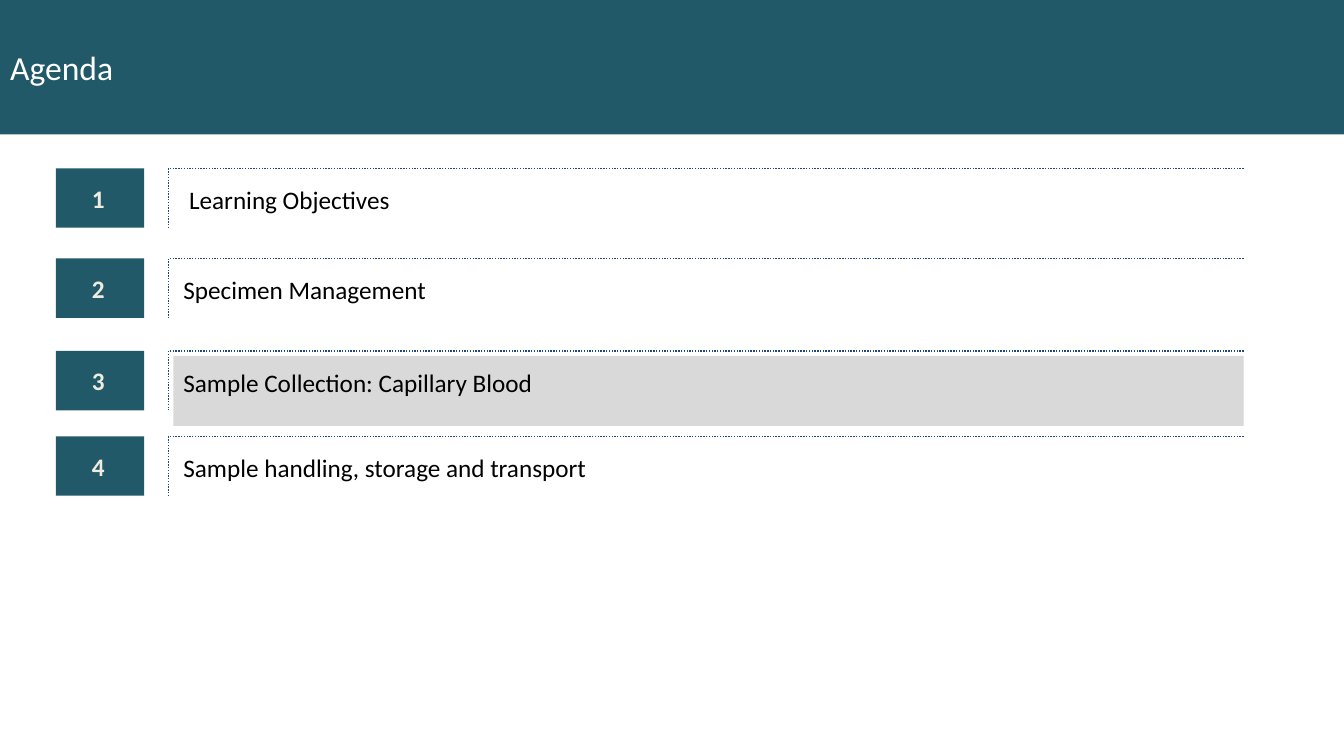
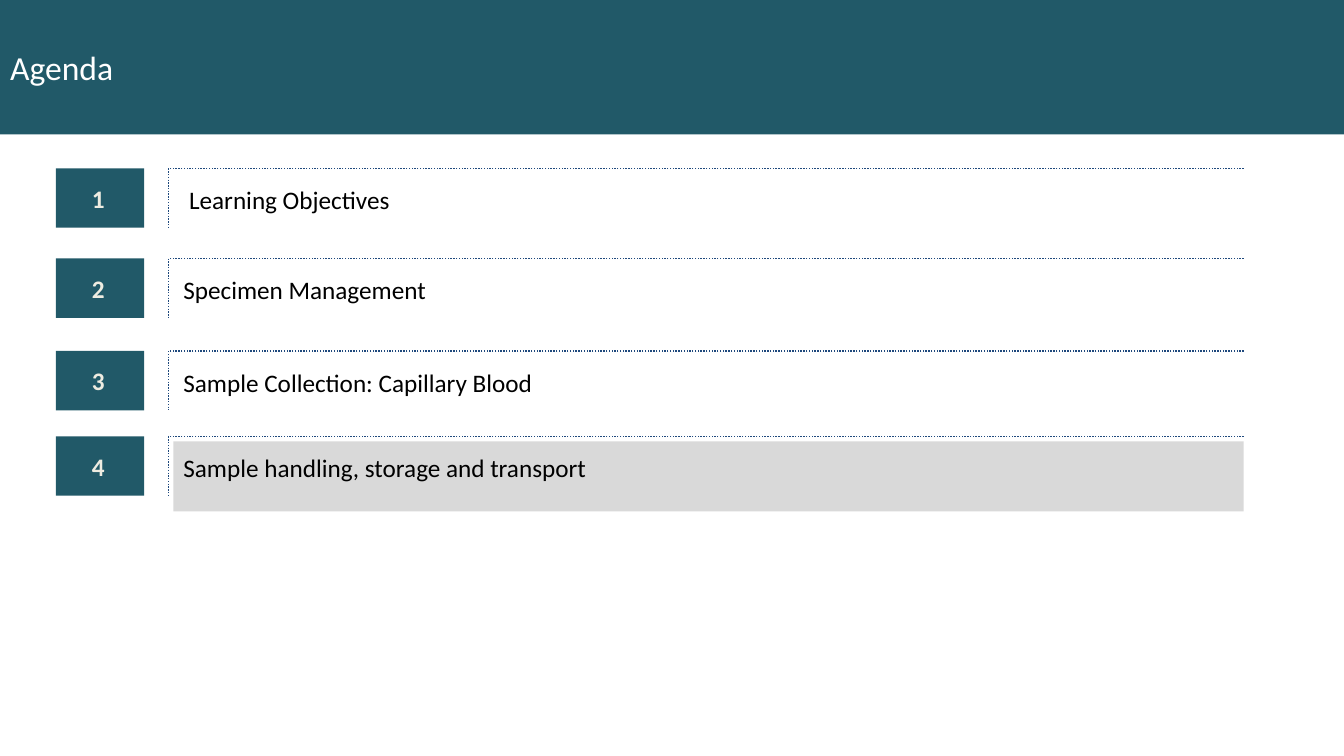
from dataclasses import dataclass
from typing import Any

from pptx import Presentation
from pptx.dml.color import RGBColor
from pptx.enum import dml, shapes, text
from pptx.util import Pt

# Shared look
TEAL, CREAM, WHITE, BLACK = "215968", "EEECE1", "FFFFFF", "000000"
HIGHLIGHT_GREY, RULE_BLUE = "D9D9D9", "1F497D"
SLIDE_WIDTH, SLIDE_HEIGHT, BAND_HEIGHT = 960, 540, 96

# Agenda grid
BADGE_LEFT, BADGE_WIDTH, ROW_HEIGHT = 40, 63, 42.5
RULE_LEFT, RULE_RIGHT = 120.5, 888.3
TOPIC_LEFT, TOPIC_WIDTH, TOPIC_HEIGHT, TOPIC_OFFSET = 131, 713.5, 20.7, 13.2
HIGHLIGHT_LEFT, HIGHLIGHT_HEIGHT, HIGHLIGHT_OFFSET = 123.8, 50, 3.7

TITLE_FRAME = {
    "vertical_anchor": text.MSO_ANCHOR.MIDDLE,
    "auto_size": text.MSO_AUTO_SIZE.NONE,
    "word_wrap": True,
}
BADGE_FRAME = TITLE_FRAME | {
    "margin_left": Pt(4.3), "margin_right": Pt(7.2),
    "margin_top": Pt(3.6), "margin_bottom": Pt(3.6),
}
TOPIC_FRAME = {
    "margin_left": 0, "margin_right": 0, "margin_top": 0, "margin_bottom": 0,
    "word_wrap": True, "auto_size": text.MSO_AUTO_SIZE.SHAPE_TO_FIT_TEXT,
}


@dataclass(frozen=True)
class AgendaItem:
    number: int
    topic: str
    top: float


AGENDA = [
    AgendaItem(1, " Learning Objectives", 120.2),
    AgendaItem(2, "Specimen Management", 184.6),
    AgendaItem(3, "Sample Collection: Capillary Blood", 250.6),
    AgendaItem(4, "Sample handling, storage and transport", 311.6),
]


def color(value: str) -> RGBColor:
    return RGBColor.from_string(value)


def apply(target: Any, formats: dict[str, Any]) -> None:
    for name, value in formats.items():
        setattr(target, name, value)


def fill(shape: Any, value: str) -> None:
    shape.fill.solid()
    shape.fill.fore_color.rgb = color(value)


def write(shape: Any, words: str, frame: dict[str, Any], size: float, ink: str,
          align: Any = text.PP_ALIGN.LEFT, bold: bool = False) -> None:
    apply(shape.text_frame, frame)
    paragraph = shape.text_frame.paragraphs[0]
    paragraph.alignment = align
    run = paragraph.add_run()
    run.text = words
    apply(run.font, {"name": "Calibri", "size": Pt(size), "bold": bold})
    run.font.color.rgb = color(ink)


def add_rectangle(parent: Any, left: float, top: float, width: float,
                  height: float, value: str) -> Any:
    rectangle = parent.shapes.add_shape(
        shapes.MSO_SHAPE.RECTANGLE, Pt(left), Pt(top), Pt(width), Pt(height))
    rectangle.shadow.inherit = False
    rectangle.line.fill.background()
    fill(rectangle, value)
    return rectangle


def add_title_band(slide: Any, words: str) -> None:
    band = slide.shapes.title
    apply(band, {"left": 0, "top": 0, "width": Pt(SLIDE_WIDTH),
                 "height": Pt(BAND_HEIGHT)})
    fill(band, TEAL)
    write(band, words, TITLE_FRAME, 24, WHITE)


def add_agenda_row(slide: Any, item: AgendaItem) -> None:
    row = slide.shapes.add_group_shape()

    # Number badge
    badge = add_rectangle(row, BADGE_LEFT, item.top, BADGE_WIDTH, ROW_HEIGHT, TEAL)
    write(badge, str(item.number), BADGE_FRAME, 18, CREAM,
          text.PP_ALIGN.CENTER, bold=True)

    # Topic
    topic = row.shapes.add_textbox(Pt(TOPIC_LEFT), Pt(item.top + TOPIC_OFFSET),
                                   Pt(TOPIC_WIDTH), Pt(TOPIC_HEIGHT))
    write(topic, item.topic, TOPIC_FRAME, 18, BLACK)
    topic.text_frame.paragraphs[0].line_spacing = 0.95

    # Dotted rule along the top and left
    outline = row.shapes.build_freeform(Pt(RULE_RIGHT), Pt(item.top))
    outline.add_line_segments(
        [(Pt(RULE_LEFT), Pt(item.top)),
         (Pt(RULE_LEFT), Pt(item.top + ROW_HEIGHT))], close=False)
    rule = outline.convert_to_shape()
    rule.shadow.inherit = False
    rule.fill.background()
    rule.line.color.rgb = color(RULE_BLUE)
    apply(rule.line, {"width": Pt(1), "dash_style": dml.MSO_LINE.ROUND_DOT})


def add_agenda_slide(deck: Any, current: AgendaItem) -> None:
    slide = deck.slides.add_slide(deck.slide_layouts.get_by_name("Title Only"))
    add_title_band(slide, "Agenda")
    add_rectangle(slide, HIGHLIGHT_LEFT, current.top + HIGHLIGHT_OFFSET,
                  RULE_RIGHT - HIGHLIGHT_LEFT, HIGHLIGHT_HEIGHT, HIGHLIGHT_GREY)
    for item in AGENDA:
        add_agenda_row(slide, item)


def main() -> None:
    deck = Presentation()
    apply(deck, {"slide_width": Pt(SLIDE_WIDTH), "slide_height": Pt(SLIDE_HEIGHT)})
    for current in AGENDA[2:]:
        add_agenda_slide(deck, current)
    deck.save("out.pptx")


if __name__ == "__main__":
    main()
